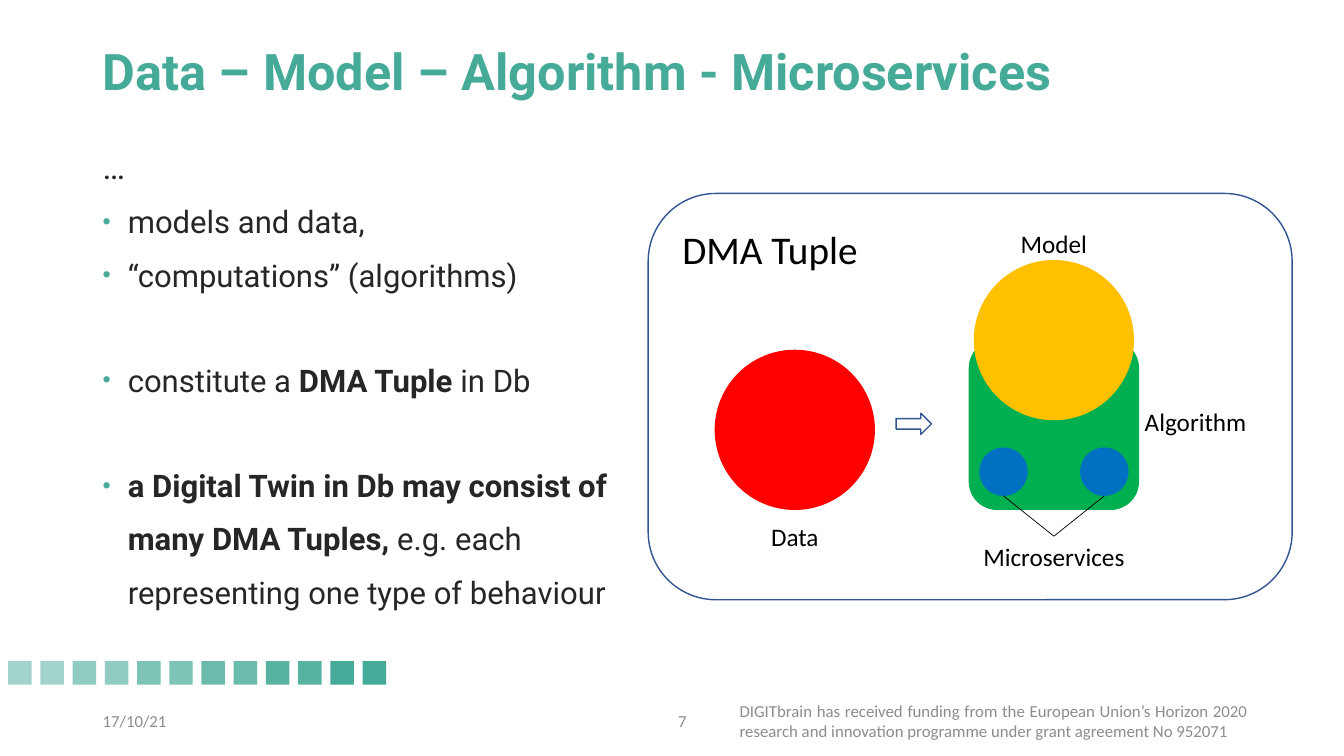
from collections import namedtuple

from lxml import etree
from pptx import Presentation
from pptx.dml.color import RGBColor
from pptx.enum.shapes import MSO_CONNECTOR as Connector, MSO_SHAPE as Shape
from pptx.enum.text import MSO_ANCHOR as Anchor, PP_ALIGN as Align
from pptx.oxml.ns import qn
from pptx.util import Pt

TEAL = RGBColor(0x46, 0xAA, 0x98)
GREY = RGBColor(0x8C, 0x8C, 0x8C)
DARK = RGBColor(0x26, 0x26, 0x26)
BLACK = RGBColor(0, 0, 0)
OUTLINE = RGBColor(0x32, 0x54, 0x91)
GREEN = RGBColor(0x00, 0xB0, 0x50)
AMBER = RGBColor(0xFF, 0xC0, 0x00)
BLUE = RGBColor(0x00, 0x70, 0xC0)
RED = RGBColor(0xFF, 0, 0)

Box = namedtuple("Box", "left top width height")

BODY_LINE = 37.1
# Each bullet: blank lines above it, then its (text, bold) spans
BULLETS = [
    (0, [("models and data,", False)]),
    (0, [("“computations” (algorithms)", False)]),
    (1, [("constitute a ", False), ("DMA Tuple ", True), ("in Db", False)]),
    (1, [("a Digital Twin in Db may consist of many DMA Tuples, ", True),
         ("e.g. each representing one type of behaviour", False)]),
]


def add_figure(page, kind, box, fill=None, line=None):
    figure = page.shapes.add_shape(kind, *map(Pt, box))
    figure.shadow.inherit = False
    if fill is None:
        figure.fill.background()
    else:
        figure.fill.solid()
        figure.fill.fore_color.rgb = fill
    if line is None:
        figure.line.fill.background()
    else:
        figure.line.color.rgb = line
        figure.line.width = Pt(1)
    return figure


def set_font(para, name, size, color, bold=None):
    font = para.font
    font.name, font.size, font.bold = name, Pt(size), bold
    font.color.rgb = color


def add_text(page, box, text, size, color, name="Calibri", bold=None,
             align=Align.LEFT, anchor=Anchor.TOP, wrap=True):
    frame = page.shapes.add_textbox(*map(Pt, box)).text_frame
    frame.word_wrap = wrap
    frame.vertical_anchor = anchor
    para = frame.paragraphs[0]
    para.text = text
    para.alignment = align
    set_font(para, name, size, color, bold)
    return frame


def add_bullet_mark(para):
    props = para._p.get_or_add_pPr()
    props.set("marL", str(Pt(18)))
    props.set("indent", str(-Pt(18)))
    color = etree.SubElement(props, qn("a:buClr"))
    etree.SubElement(color, qn("a:srgbClr"), val=str(TEAL))
    etree.SubElement(props, qn("a:buSzPct"), val="75000")
    etree.SubElement(props, qn("a:buFont"), typeface="Arial")
    etree.SubElement(props, qn("a:buChar"), char="•")


def add_title(page, box):
    frame = add_text(page, box, "Data – Model – Algorithm - Microservices", 36,
                     TEAL, "Roboto", bold=True, anchor=Anchor.MIDDLE)
    frame.paragraphs[0].line_spacing = 0.9


def add_body(page, box):
    frame = add_text(page, box, "…", 24.1, DARK, "Roboto")
    frame.paragraphs[0].line_spacing = 1.5
    for blank_lines, spans in BULLETS:
        para = frame.add_paragraph()
        add_bullet_mark(para)
        para.line_spacing = 1.43
        para.space_before = Pt(blank_lines * BODY_LINE)
        set_font(para, "Roboto", 22.2, DARK)
        for text, bold in spans:
            span = para.add_run()
            span.text = text
            span.font.bold = bold


def add_square_strip(page, box, count=12):
    """Row of teal squares that grow opaque in pairs, from 50% to 100%."""
    step = (box.width - box.height) / (count - 1)
    for index in range(count):
        place = Box(box.left + index * step, box.top, box.height, box.height)
        square = add_figure(page, Shape.RECTANGLE, place, TEAL)
        opacity = 50 + 10 * (index // 2)
        if opacity < 100:
            color = square._element.spPr.find(qn("a:solidFill"))[0]
            etree.SubElement(color, qn("a:alpha"), val=str(opacity * 1000))


def add_footer(page, box):
    def note(left, width, text, align):
        add_text(page, Box(box.left + left, box.top, width, box.height), text,
                 12, GREY, align=align, anchor=Anchor.MIDDLE)

    note(0, 216, "17/10/21", Align.LEFT)
    note(396.7, 34.6, "7", Align.RIGHT)
    note(455, 377.3, "DIGITbrain has received funding from the European Union’s "
         "Horizon 2020 research and innovation programme under grant "
         "agreement No 952071", Align.JUSTIFY)


def add_tuple_diagram(page, box):
    """Rounded frame with data leading to the model, algorithm and microservices."""
    data_x, stack_x = box.left + 104.7, box.left + 289.8
    tip_y = box.top + 244.8

    def centred(x, top, width, height):
        return Box(x - width / 2, box.top + top, width, height)

    def label(x, top, width, text):
        add_text(page, centred(x, top, width, 28.8), text, 18, BLACK,
                 align=Align.CENTER, wrap=False)

    add_figure(page, Shape.ROUNDED_RECTANGLE,
               centred(stack_x, 104.4, 121.7, 121.7), GREEN)
    add_figure(page, Shape.OVAL, centred(stack_x, 47.5, 114.5, 114.5), AMBER)
    add_figure(page, Shape.OVAL, centred(data_x, 111.6, 114.5, 114.5), RED)
    for side in (-36, 36):
        service = centred(stack_x + side, 181.4, 34.6, 34.6)
        add_figure(page, Shape.OVAL, service, BLUE)
        pointer = page.shapes.add_connector(
            Connector.STRAIGHT, Pt(stack_x + side),
            Pt(service.top + service.height), Pt(stack_x), Pt(tip_y))
        pointer.line.color.rgb = BLACK
        pointer.line.width = Pt(0.5)
        etree.SubElement(pointer._element.spPr, qn("a:effectLst"))
    add_figure(page, Shape.RIGHT_ARROW, centred(box.left + 189.7, 157, 25.2, 15.1),
               line=OUTLINE)

    label(stack_x, 21.6, 62.6, "Model")
    label(data_x, 230.4, 49, "Data")
    label(box.left + 391, 148.3, 87.8, "Algorithm")
    label(stack_x, 244.8, 116.6, "Microservices")

    add_figure(page, Shape.ROUNDED_RECTANGLE, box, line=OUTLINE)
    add_text(page, Box(box.left + 17.3, box.top + 19.4, 141, 41), "DMA Tuple",
             28, BLACK, wrap=False)


def main():
    deck = Presentation()
    deck.slide_width, deck.slide_height = Pt(960), Pt(540)
    page = deck.slides.add_slide(deck.slide_layouts[6])
    add_square_strip(page, Box(5.8, 472.3, 270, 16.8))
    add_footer(page, Box(66.2, 500.6, 832.3, 28.8))
    add_body(page, Box(66.2, 86.4, 387.4, 379.4))
    add_tuple_diagram(page, Box(463, 138.2, 460, 290.2))
    add_title(page, Box(66.2, 28.8, 828, 49))
    deck.save("out.pptx")


if __name__ == "__main__":
    main()
